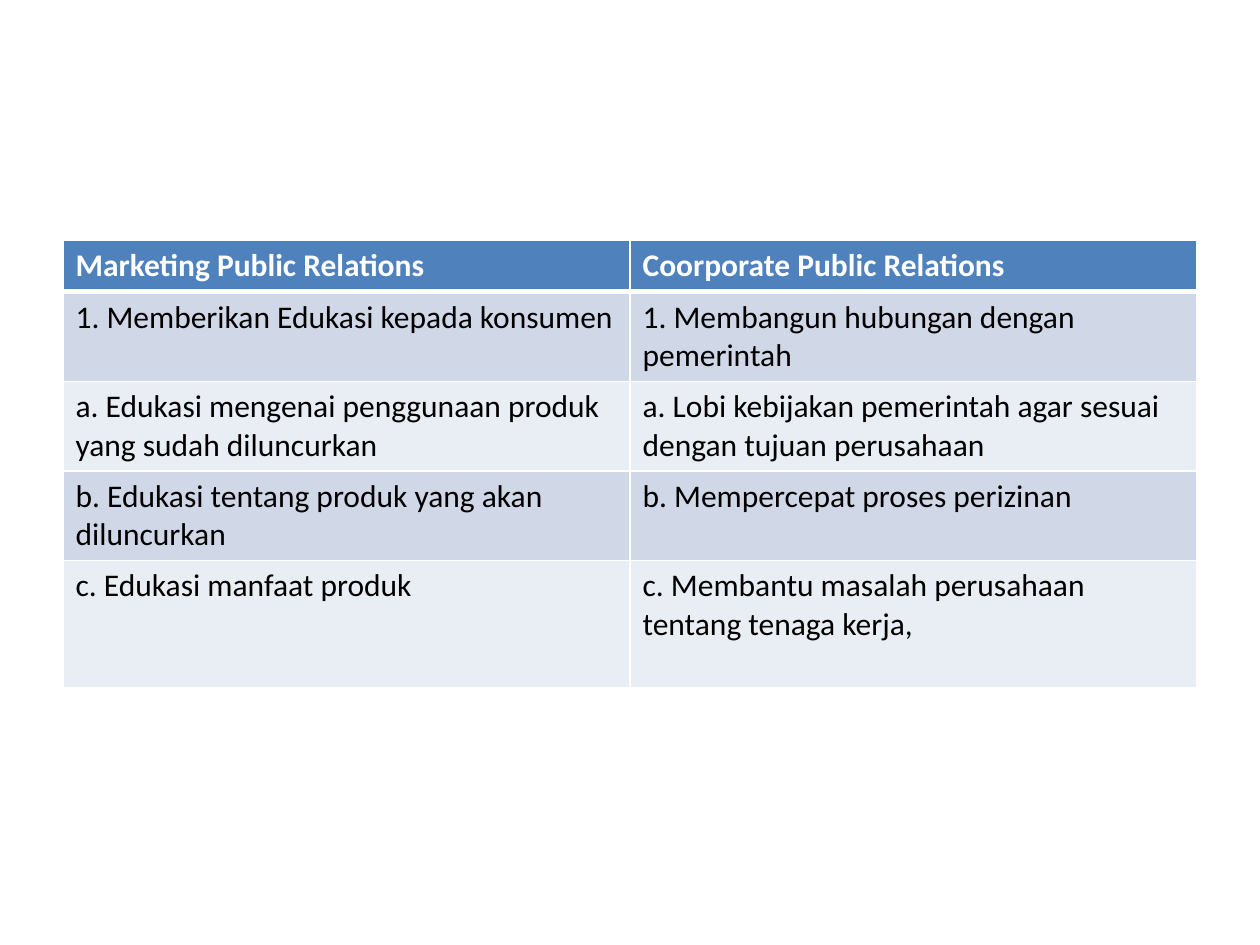
from lxml import etree
from pptx import Presentation
from pptx import util as u
from pptx.dml.color import RGBColor
from pptx.oxml.ns import qn

HEADER = ("Marketing Public Relations", "Coorporate Public Relations")
ACTIVITIES = [
    ("1. Memberikan Edukasi kepada konsumen",
     "1. Membangun hubungan dengan pemerintah"),
    ("a. Edukasi mengenai penggunaan produk yang sudah diluncurkan",
     "a. Lobi kebijakan pemerintah agar sesuai dengan tujuan perusahaan"),
    ("b. Edukasi tentang produk yang akan diluncurkan",
     "b. Mempercepat proses perizinan"),
    ("c. Edukasi manfaat produk",
     "c. Membantu masalah perusahaan tentang tenaga kerja,"),
]
ROW_HEIGHTS = [0.4, 0.71, 0.71, 0.71, 1.01]


def color(hex_code):
    return RGBColor.from_string(hex_code)


class ComparisonSlide:
    font_name = "Calibri"
    font_size = u.Pt(18)
    header_fill = "4F81BD"
    band_fills = ("D0D8E8", "E9EDF4")
    header_text, body_text, rule = "FFFFFF", "000000", "FFFFFF"

    def __init__(self, presentation):
        self.slide = presentation.slides.add_slide(presentation.slide_layouts[6])

    def borders(self, cell, **widths):
        """Draw the cell edges; they must come before the fill in the XML."""
        properties = cell._tc.get_or_add_tcPr()
        for position, (side, points) in enumerate(widths.items()):
            line = etree.Element(qn(f"a:ln{side}"), w=str(u.Pt(points)))
            fill = etree.SubElement(line, qn("a:solidFill"))
            etree.SubElement(fill, qn("a:srgbClr"), val=self.rule)
            properties.insert(position, line)

    def cell(self, cell, wording, fill, text_color, bold):
        cell.text = wording
        cell.fill.solid()
        cell.fill.fore_color.rgb = color(fill)
        font = cell.text_frame.paragraphs[0].font
        font.name, font.size, font.bold = self.font_name, self.font_size, bold
        font.color.rgb = color(text_color)

    def table(self, left, top, width, rows, heights):
        columns = len(rows[0])
        table = self.slide.shapes.add_table(
            len(rows), columns, u.Inches(left), u.Inches(top),
            u.Inches(width), u.Inches(sum(heights))).table
        for column in table.columns:
            column.width = u.Inches(width / columns)
        for r, (wordings, height) in enumerate(zip(rows, heights)):
            table.rows[r].height = u.Inches(height)
            is_header = r == 0
            fill = self.header_fill if is_header else self.band_fills[(r - 1) % 2]
            text_color = self.header_text if is_header else self.body_text
            for c, wording in enumerate(wordings):
                cell = table.cell(r, c)
                self.cell(cell, wording, fill, text_color, is_header)
                # A thicker rule parts the header from the body
                self.borders(cell, L=1, R=1, T=3 if r == 1 else 1,
                             B=3 if is_header else 1)


def main():
    presentation = Presentation()
    presentation.slide_width = u.Inches(10)
    presentation.slide_height = u.Inches(7.5)

    # Comparison of the two kinds of public relations
    comparison = ComparisonSlide(presentation)
    comparison.table(0.5, 1.91, 9, [HEADER, *ACTIVITIES], ROW_HEIGHTS)

    presentation.save("out.pptx")


if __name__ == "__main__":
    main()
